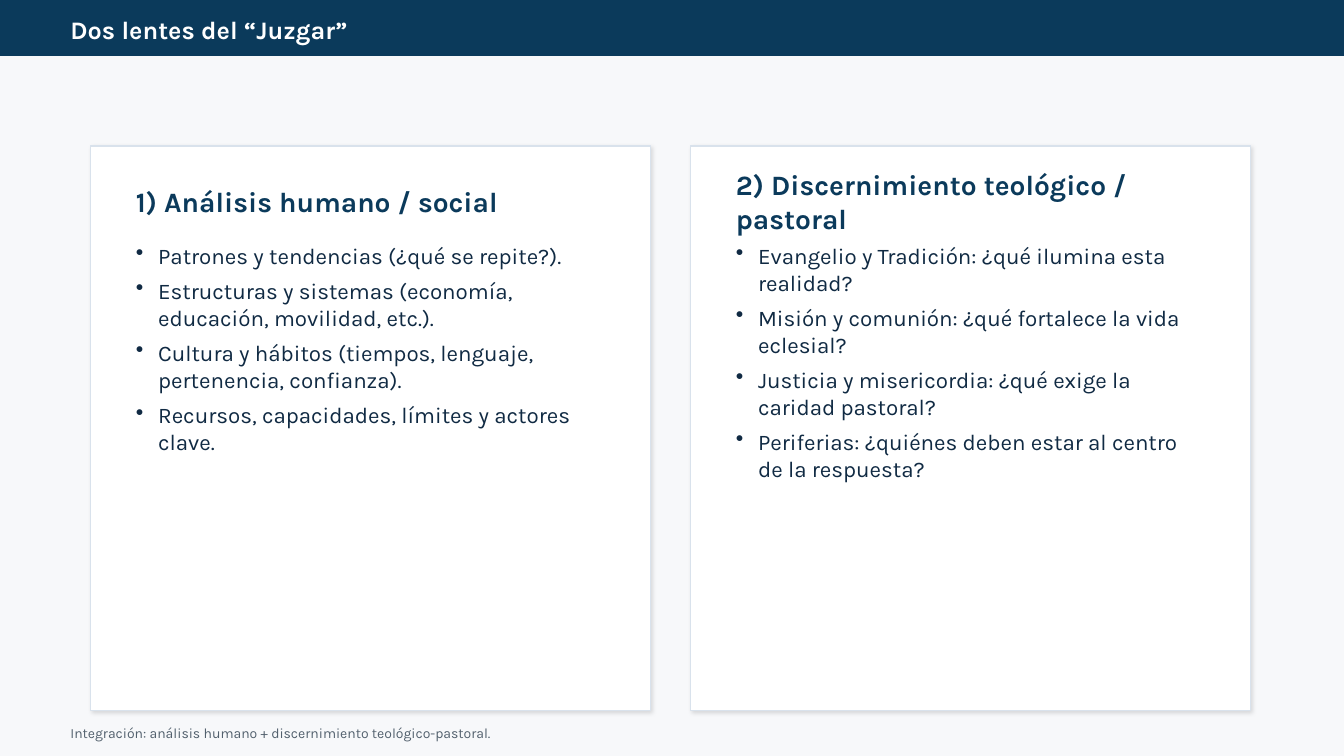
from lxml import etree
from pptx import Presentation
from pptx.dml.color import RGBColor
from pptx.enum.shapes import MSO_SHAPE
from pptx.enum.text import MSO_ANCHOR
from pptx.oxml.ns import qn
from pptx.util import Inches, Pt

RECTANGLE = MSO_SHAPE.RECTANGLE
TOP, MIDDLE = MSO_ANCHOR.TOP, MSO_ANCHOR.MIDDLE
FONT = "Karla"
COLORS = {
    "background": "F7F8FA",
    "navy": "0B3A5B",
    "white": "FFFFFF",
    "border": "D9E2EC",
    "body": "102A43",
    "muted": "52606D",
    "shadow": "000000",
}
SLIDE_WIDTH, SLIDE_HEIGHT = 13.33, 7.5
MARGIN, TEXT_WIDTH = 0.6, 12.2
CARD_LEFT, CARD_TOP, CARD_WIDTH, CARD_HEIGHT, CARD_GAP = 0.9, 1.45, 5.55, 5.6, 0.4
CARD_PADDING = 0.35
BULLET_INDENT = 0.22

LENSES = [
    ("1) Análisis humano / social", [
        "Patrones y tendencias (¿qué se repite?).",
        "Estructuras y sistemas (economía, educación, movilidad, etc.).",
        "Cultura y hábitos (tiempos, lenguaje, pertenencia, confianza).",
        "Recursos, capacidades, límites y actores clave.",
    ]),
    ("2) Discernimiento teológico / pastoral", [
        "Evangelio y Tradición: ¿qué ilumina esta realidad?",
        "Misión y comunión: ¿qué fortalece la vida eclesial?",
        "Justicia y misericordia: ¿qué exige la caridad pastoral?",
        "Periferias: ¿quiénes deben estar al centro de la respuesta?",
    ]),
]


def rgb(name):
    return RGBColor.from_string(COLORS[name])


def add_panel(slide, box, fill, border):
    panel = slide.shapes.add_shape(RECTANGLE, *map(Inches, box))
    panel.fill.solid()
    panel.fill.fore_color.rgb = rgb(fill)
    panel.line.color.rgb = rgb(border)
    panel.line.width = Pt(1)
    panel.shadow.inherit = False
    return panel


def add_soft_shadow(panel):
    effects = panel._element.spPr.find(qn("a:effectLst"))
    shadow = etree.SubElement(
        effects, qn("a:outerShdw"), blurRad=str(Pt(3)), dist=str(Pt(1.5)),
        dir=str(45 * 60000), algn="bl", rotWithShape="0")
    color = etree.SubElement(shadow, qn("a:srgbClr"), val=COLORS["shadow"])
    etree.SubElement(color, qn("a:alpha"), val="12000")


def add_bullet(paragraph):
    properties = paragraph._p.get_or_add_pPr()
    properties.set("marL", str(Inches(BULLET_INDENT)))
    properties.set("indent", str(-Inches(BULLET_INDENT)))
    etree.SubElement(properties, qn("a:buChar"), char="•")
    paragraph.space_after = Pt(6)


def add_text(slide, box, lines, size, color, bold=False, anchor=MIDDLE, bulleted=False):
    frame = slide.shapes.add_textbox(*map(Inches, box)).text_frame
    frame.word_wrap = True
    frame.vertical_anchor = anchor
    for index, line in enumerate(lines):
        paragraph = frame.add_paragraph() if index else frame.paragraphs[0]
        if bulleted:
            add_bullet(paragraph)
        run = paragraph.add_run()
        run.text = line
        run.font.name = FONT
        run.font.size = Pt(size)
        run.font.bold = bold
        run.font.color.rgb = rgb(color)


def add_header(slide, box, title):
    left, top, width, height = box
    add_panel(slide, box, "navy", "navy")
    add_text(slide, (left + MARGIN, top + 0.12, TEXT_WIDTH, 0.35), [title], 18, "white", bold=True)


def add_footer(slide, box, note):
    add_text(slide, box, [note], 10, "muted")


def add_lens_card(slide, box, heading, points):
    left, top, width, height = box
    text_left, text_width = left + CARD_PADDING, width - 2 * CARD_PADDING
    add_soft_shadow(add_panel(slide, box, "white", "border"))
    add_text(slide, (text_left, top + 0.3, text_width, 0.5), [heading], 20, "navy", bold=True)
    add_text(slide, (text_left, top + 0.9, text_width, height - 1), points, 16, "body",
             anchor=TOP, bulleted=True)


def main():
    deck = Presentation()
    deck.slide_width, deck.slide_height = Inches(SLIDE_WIDTH), Inches(SLIDE_HEIGHT)
    slide = deck.slides.add_slide(deck.slide_layouts[6])
    slide.background.fill.solid()
    slide.background.fill.fore_color.rgb = rgb("background")

    add_header(slide, (0, 0, SLIDE_WIDTH, 0.55), "Dos lentes del “Juzgar”")
    add_footer(slide, (MARGIN, 7.15, TEXT_WIDTH, 0.25),
               "Integración: análisis humano + discernimiento teológico-pastoral.")
    for column, (heading, points) in enumerate(LENSES):
        left = CARD_LEFT + column * (CARD_WIDTH + CARD_GAP)
        add_lens_card(slide, (left, CARD_TOP, CARD_WIDTH, CARD_HEIGHT), heading, points)

    deck.save("out.pptx")


if __name__ == "__main__":
    main()
